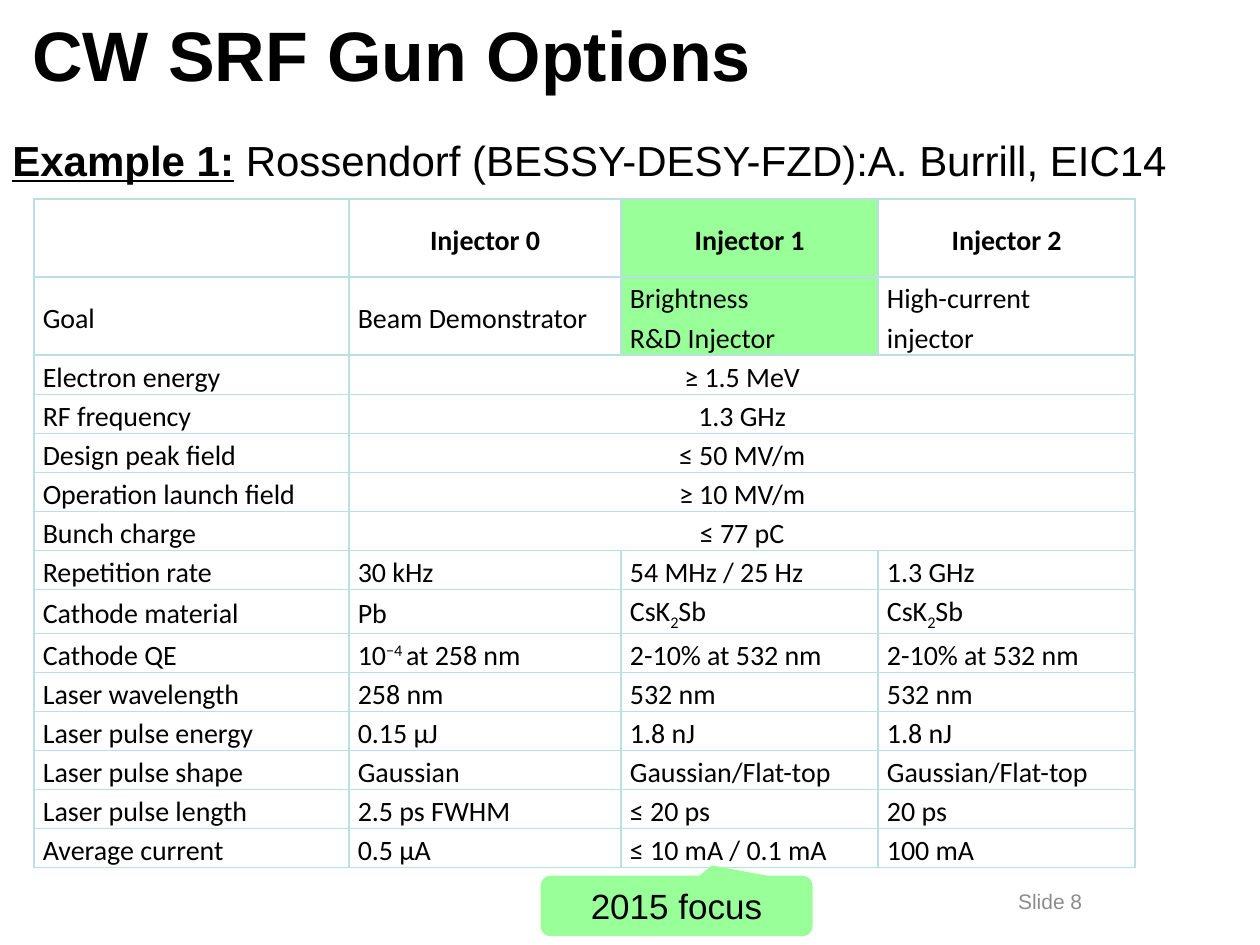
from lxml import etree
from pptx import Presentation, util as u
from pptx.dml.color import RGBColor
from pptx.enum import shapes, text
from pptx.oxml import ns

Inches, Pt = u.Inches, u.Pt
HUES = {"ink": "000000", "grey": "8C8C8C", "green": "99FF99", "rule": "BBE0E3"}
LEFT, MID, JUST = text.PP_ALIGN.LEFT, text.PP_ALIGN.CENTER, text.PP_ALIGN.JUSTIFY
CENTRE = text.MSO_ANCHOR.MIDDLE


def style(para, size, face="Arial", hue="ink", bold=False, align=LEFT):
    para.alignment = align
    font = para.font
    font.size, font.name, font.bold = Pt(size), face, bold
    font.color.rgb = RGBColor.from_string(HUES[hue])


def add_text(box, words, **look):
    shape = slide.shapes.add_textbox(*map(Inches, box))
    frame = shape.text_frame
    frame.word_wrap = True
    para = frame.paragraphs[0]
    para.text = words
    style(para, **look)
    return frame


deck = Presentation()
deck.slide_width, deck.slide_height = Inches(10), Inches(7.5)
slide = deck.slides.add_slide(deck.slide_layouts[6])

# Example line
body = add_text((0, 1.02, 10, 0.5), "", size=24)
para = body.paragraphs[0]
para.space_before = Pt(2.5)
lead = para.add_run()
lead.text = "Example 1:"
lead.font.bold = lead.font.underline = True
para.add_run().text = " Rossendorf (BESSY-DESY-FZD):A. Burrill, EIC14"

# Slide number
add_text((7.17, 6.95, 2.33, 0.4), "Slide 8", size=12, hue="grey",
         align=MID).vertical_anchor = CENTRE

# Table data: a two-item row spans the injectors, a tuple holds (text, baseline) runs
SALT = (("CsK", 0), ("2", -25000), ("Sb", 0))
YIELD = (("10", 0), ("−4 ", 30000), ("at 258 nm", 0))
ROWS = [
    ["", "Injector 0", "Injector 1", "Injector 2"],
    ["Goal", "Beam Demonstrator", "Brightness\nR&D Injector", "High-current\ninjector"],
    ["Electron energy", "≥ 1.5 MeV"],
    ["RF frequency", "1.3 GHz"],
    ["Design peak field", "≤ 50 MV/m"],
    ["Operation launch field", "≥ 10 MV/m"],
    ["Bunch charge", "≤ 77 pC"],
    ["Repetition rate", "30 kHz", "54 MHz / 25 Hz", "1.3 GHz"],
    ["Cathode material", "Pb", SALT, SALT],
    ["Cathode QE", YIELD, "2-10% at 532 nm", "2-10% at 532 nm"],
    ["Laser wavelength", "258 nm", "532 nm", "532 nm"],
    ["Laser pulse energy", "0.15 µJ", "1.8 nJ", "1.8 nJ"],
    ["Laser pulse shape", "Gaussian", "Gaussian/Flat-top", "Gaussian/Flat-top"],
    ["Laser pulse length", "2.5 ps FWHM", "≤ 20 ps", "20 ps"],
    ["Average current", "0.5 µA", "≤ 10 mA / 0.1 mA", "100 mA"],
]
WIDTHS = [2.5, 2.16, 2.04, 2.04]

# Table grid
grid = slide.shapes.add_table(len(ROWS), 4, Inches(0.27), Inches(1.58),
                              Inches(8.74), Inches(5.24)).table
grid.first_row = grid.horz_banding = False
for col, width in zip(grid.columns, WIDTHS):
    col.width = Inches(width)
for i, row in enumerate(grid.rows):
    row.height = Inches(0.62 if i < 2 else 0.31)

# Table cells
for i, row in enumerate(ROWS):
    wide = len(row) == 2
    for j in range(4):
        cell = grid.cell(i, j)
        cell.vertical_anchor = CENTRE
        cell.margin_left = cell.margin_right = Inches(0.07)
        cell.margin_top = cell.margin_bottom = 0
        props = cell._tc.get_or_add_tcPr()
        for side in ("lnL", "lnR", "lnT", "lnB"):
            line = etree.SubElement(props, ns.qn("a:" + side), w=str(Pt(1)))
            fill = etree.SubElement(line, ns.qn("a:solidFill"))
            etree.SubElement(fill, ns.qn("a:srgbClr"), val=HUES["rule"])
        if i < 2 and j == 2:
            cell.fill.solid()
            cell.fill.fore_color.rgb = RGBColor.from_string(HUES["green"])
        else:
            cell.fill.background()
        if j >= len(row):
            continue
        frame = cell.text_frame
        if isinstance(row[j], tuple):
            for words, shift in row[j]:
                run = frame.paragraphs[0].add_run()
                run.text = words
                if shift:
                    run._r.get_or_add_rPr().set("baseline", str(shift))
        else:
            frame.text = row[j]
        for para in frame.paragraphs:
            style(para, 16, "Calibri", bold=i == 0,
                  align=MID if i == 0 or (wide and j == 1) else JUST)
            para.line_spacing = 1.15
    if wide:
        grid.cell(i, 1).merge(grid.cell(i, 3))

# Focus callout
note = slide.shapes.add_shape(shapes.MSO_SHAPE.ROUNDED_RECTANGULAR_CALLOUT,
                              Inches(4.29), Inches(6.95), Inches(2.16), Inches(0.48))
for k, value in enumerate((0.13, -0.67, 0.17)):
    note.adjustments[k] = value
note.shadow.inherit = False
note.fill.solid()
note.fill.fore_color.rgb = RGBColor.from_string(HUES["green"])
note.line.fill.background()
note.text_frame.vertical_anchor = CENTRE
note.text_frame.text = "2015 focus"
style(note.text_frame.paragraphs[0], 20, align=MID)

# Title
add_text((0.16, 0.01, 6.83, 0.83), "CW SRF Gun Options", size=40,
         bold=True).vertical_anchor = CENTRE

deck.save("out.pptx")
